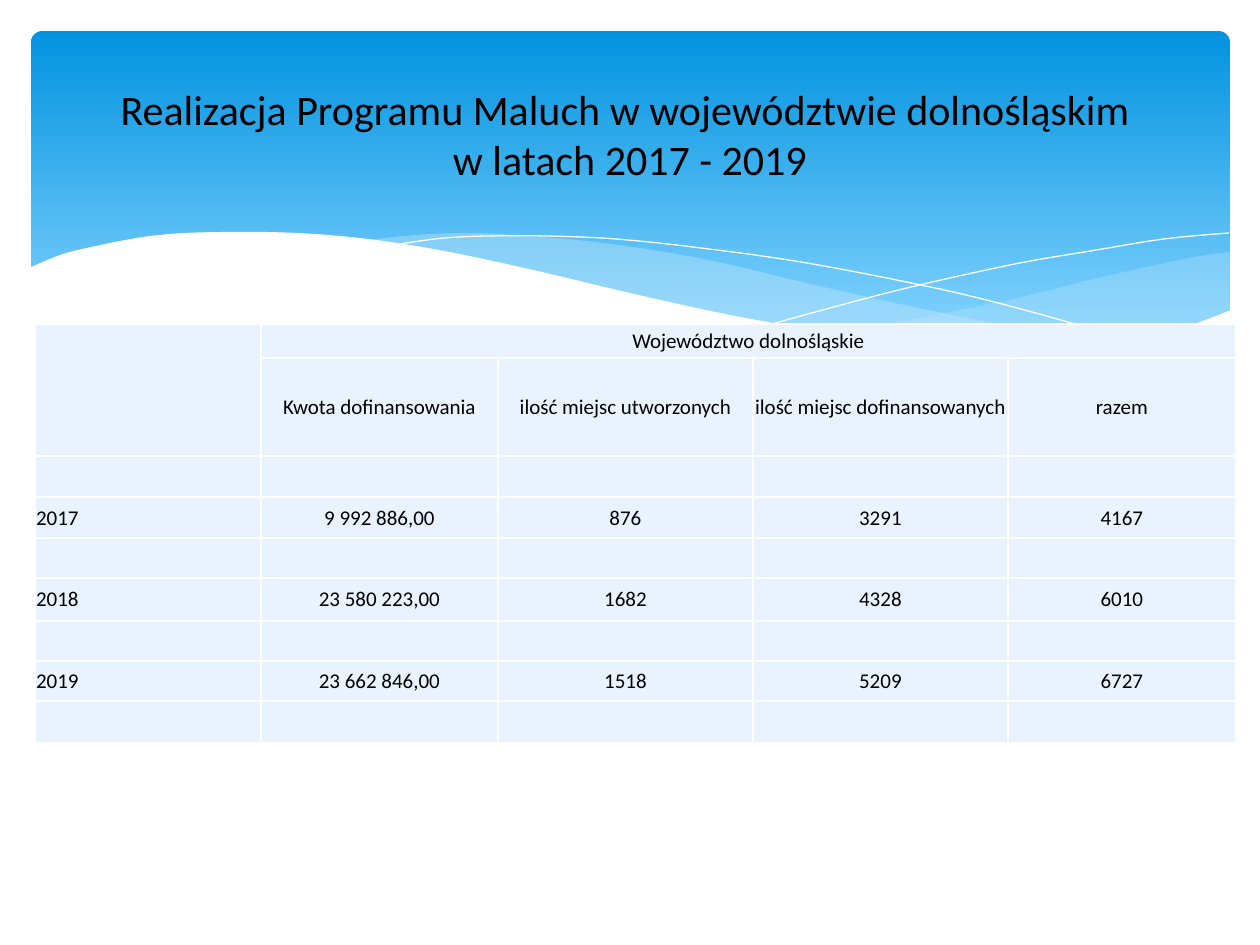
from dataclasses import dataclass

from lxml import etree
from pptx import Presentation
from pptx.dml.color import RGBColor
from pptx.enum.shapes import MSO_SHAPE
from pptx.enum.text import MSO_ANCHOR, PP_ALIGN
from pptx.oxml.ns import qn
from pptx.util import Pt

ROUNDED = MSO_SHAPE.ROUNDED_RECTANGLE
MIDDLE = MSO_ANCHOR.MIDDLE
CENTER, JUSTIFY = PP_ALIGN.CENTER, PP_ALIGN.JUSTIFY
EMU_PER_PX = 914400 / 126


@dataclass(frozen=True)
class Theme:
    font: str = "Calibri"
    title_size: int = 24
    table_size: int = 12
    text: str = "000000"
    white: str = "FFFFFF"
    banner_top: str = "0293E0"
    banner_bottom: str = "83D3FE"
    wave: str = "C6E7FC"
    cell: str = "E8F3FF"


THEME = Theme()

# Key points of the banner's curves, in px
RIGHT_WAVE = [
    [(1230, 252), (1194, 257), (1142, 268), (1085, 281), (1014, 299),
     (949, 312), (889, 324), (833, 334)],
    [(833, 334), (906, 341), (969, 347), (1026, 350), (1077, 349),
     (1120, 346), (1160, 339), (1194, 330), (1230, 311)],
]
MIDDLE_WAVE = [
    [(1125, 344), (1054, 334), (977, 320), (890, 302), (793, 280), (736, 266),
     (682, 255), (632, 247), (586, 241), (529, 236), (479, 233), (433, 234),
     (394, 237), (360, 241)],
    [(360, 241), (431, 251), (509, 266), (566, 280), (668, 302), (757, 321),
     (838, 335), (911, 345), (974, 349), (1031, 350), (1080, 349), (1125, 344)],
]
FALLING_LINE = [
    [(389, 246), (413, 242), (445, 238), (487, 236), (546, 236), (616, 239),
     (701, 248), (801, 262), (916, 284), (1002, 304), (1143, 343)],
]
RISING_LINE = [
    [(772, 324), (823, 310), (907, 288), (1015, 264), (1091, 251),
     (1164, 239), (1229, 233)],
]
WHITE_WAVE = [
    [(1231, 310), (1197, 323), (1159, 334), (1118, 342), (1071, 347),
     (1019, 349), (959, 346), (892, 340), (816, 330), (730, 315), (634, 294),
     (563, 277), (493, 261), (428, 248), (368, 239), (315, 234), (266, 232),
     (223, 232), (184, 233), (150, 236), (120, 241), (96, 246), (66, 253),
     (45, 261), (29, 268)],
    [(29, 415), (1231, 415)],
]

COLUMNS = [226, 237, 255, 255, 228]
ROWS = [34, 98, 41, 41, 40, 43, 40, 40, 42]
REGION = "Województwo dolnośląskie"
HEADINGS = ["Kwota dofinansowania", "ilość miejsc utworzonych",
            "ilość miejsc dofinansowanych", "razem"]
YEARS = [
    ["2017", "9 992 886,00", "876", "3291", "4167"],
    ["2018", "23 580 223,00", "1682", "4328", "6010"],
    ["2019", "23 662 846,00", "1518", "5209", "6727"],
]


def px(length):
    return round(length * EMU_PER_PX)


def rgb(value):
    return RGBColor.from_string(value)


def write(frame, text, size, align=CENTER, color=THEME.text):
    """Fill a text frame with one formatted paragraph."""
    paragraph = frame.paragraphs[0]
    paragraph.alignment = align
    paragraph.text = text
    for run in paragraph.runs:
        run.font.name = THEME.font
        run.font.size = Pt(size)
        run.font.color.rgb = rgb(color)
    if not text:
        etree.SubElement(paragraph._p, qn("a:endParaRPr"), sz=str(size * 100))


def smooth(points, steps=4):
    """Catmull-Rom curve through the points."""
    padded = [points[0], *points, points[-1]]
    curve = [points[0]]
    for a, b, c, d in zip(padded, padded[1:], padded[2:], padded[3:]):
        for step in range(1, steps + 1):
            t = step / steps
            curve.append(tuple(
                (2 * q + (r - p) * t + (2 * p - 5 * q + 4 * r - s) * t ** 2
                 + (3 * q - p - 3 * r + s) * t ** 3) / 2
                for p, q, r, s in zip(a, b, c, d)))
    return curve


def add_curve(slide, sections, fill=None, opacity=100, line=None):
    points = [(px(x), px(y)) for section in sections for x, y in smooth(section)]
    builder = slide.shapes.build_freeform(*points[0])
    builder.add_line_segments(points[1:], close=fill is not None)
    shape = builder.convert_to_shape()
    shape.shadow.inherit = False
    if fill:
        shape.fill.solid()
        shape.fill.fore_color.rgb = rgb(fill)
        color = shape._element.spPr.find(".//" + qn("a:srgbClr"))
        if opacity < 100:
            etree.SubElement(color, qn("a:alpha"), val=str(opacity * 1000))
    else:
        shape.fill.background()
    if line:
        shape.line.color.rgb = rgb(line)
        shape.line.width = Pt(0)
    else:
        shape.line.fill.background()


def add_banner(slide):
    shape = slide.shapes.add_shape(ROUNDED, px(31), px(31), px(1199), px(340))
    shape.adjustments[0] = 0.034
    shape.shadow.inherit = False
    shape.line.fill.background()
    shape.fill.gradient()
    shape.fill.gradient_angle = 270
    colors = [(0, THEME.banner_top), (0.9, THEME.banner_bottom)]
    for stop, (position, color) in zip(shape.fill.gradient_stops, colors):
        stop.position = position
        stop.color.rgb = rgb(color)


def add_borders(cell, color):
    properties = cell._tc.get_or_add_tcPr()
    for index, side in enumerate(("a:lnL", "a:lnR", "a:lnT", "a:lnB")):
        border = etree.Element(qn(side), w=str(Pt(1)))
        fill = etree.SubElement(border, qn("a:solidFill"))
        etree.SubElement(fill, qn("a:srgbClr"), val=color)
        properties.insert(index, border)


def add_funding_table(slide):
    blank = [""] * len(COLUMNS)
    content = [["", REGION, "", "", ""], ["", *HEADINGS], blank]
    for year in YEARS:
        content += [year, blank]

    table = slide.shapes.add_table(len(ROWS), len(COLUMNS), px(35), px(324),
                                   px(sum(COLUMNS)), px(sum(ROWS))).table
    for column, width in zip(table.columns, COLUMNS):
        column.width = px(width)
    for row, height in zip(table.rows, ROWS):
        row.height = px(height)
    for row, values in zip(table.rows, content):
        for index, (cell, text) in enumerate(zip(row.cells, values)):
            cell.margin_left = cell.margin_right = cell.margin_top = px(1)
            cell.margin_bottom = 0
            cell.vertical_anchor = MIDDLE
            cell.fill.solid()
            cell.fill.fore_color.rgb = rgb(THEME.cell)
            add_borders(cell, THEME.white)
            write(cell.text_frame, text, THEME.table_size,
                  align=CENTER if index else JUSTIFY)
    table.cell(0, 0).merge(table.cell(1, 0))
    table.cell(0, 1).merge(table.cell(0, 4))


def add_title(slide, text):
    frame = slide.shapes.add_textbox(px(63), px(47), px(1134), px(173)).text_frame
    frame.word_wrap = True
    frame.vertical_anchor = MIDDLE
    write(frame, text, THEME.title_size)


def main():
    presentation = Presentation()
    presentation.slide_width, presentation.slide_height = px(1260), px(945)
    slide = presentation.slides.add_slide(presentation.slide_layouts[6])

    # Banner with waves
    add_banner(slide)
    add_curve(slide, RIGHT_WAVE, fill=THEME.wave, opacity=29)
    add_curve(slide, MIDDLE_WAVE, fill=THEME.wave, opacity=40)
    add_curve(slide, FALLING_LINE, line=THEME.white)
    add_curve(slide, RISING_LINE, line=THEME.white)
    add_curve(slide, WHITE_WAVE, fill=THEME.white)

    # Table and title
    add_funding_table(slide)
    add_title(slide, "Realizacja Programu Maluch w województwie dolnośląskim \v"
                     "w latach 2017 - 2019")
    presentation.save("out.pptx")


if __name__ == "__main__":
    main()
